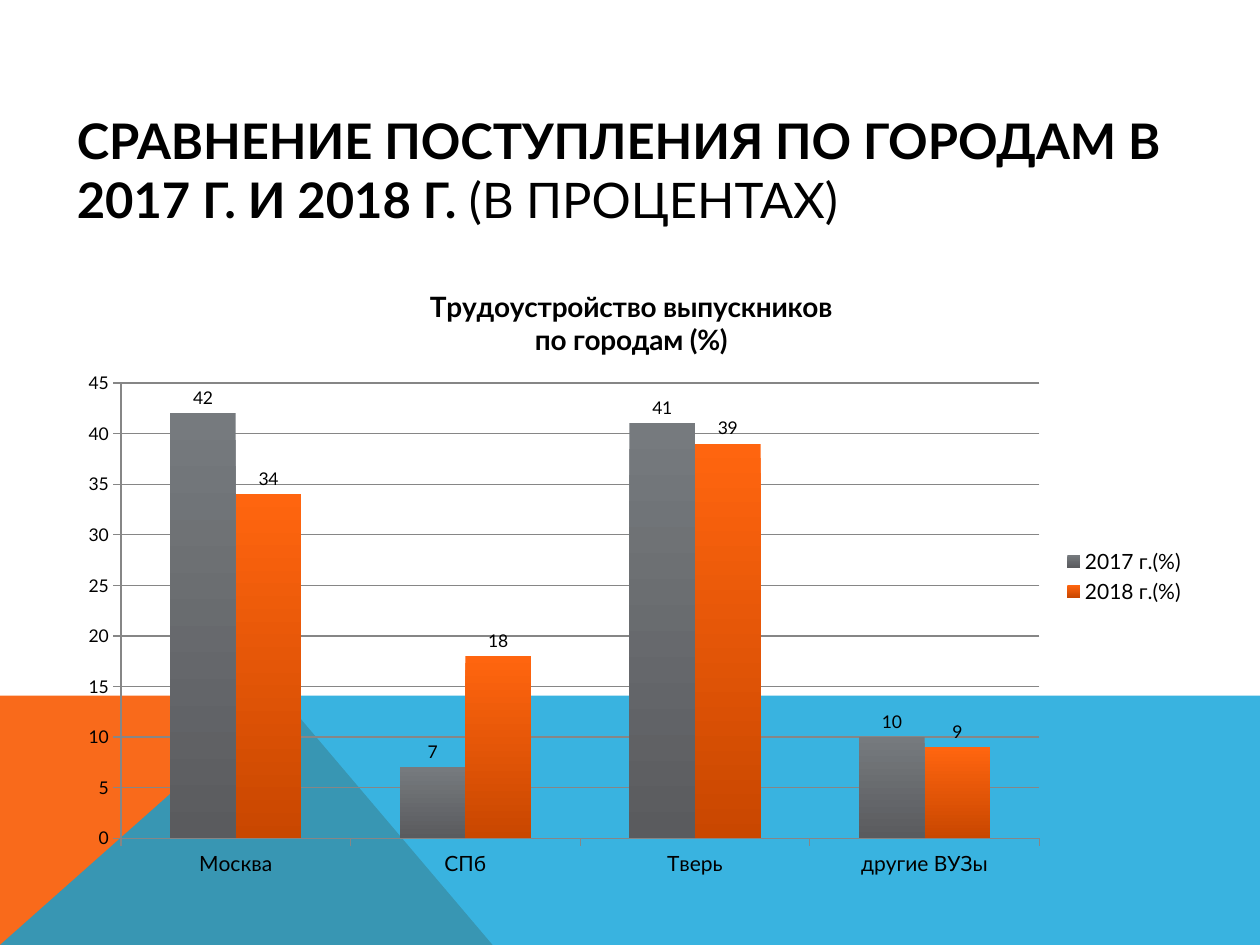
from lxml import etree
from pptx import Presentation
from pptx import util as u
from pptx.chart import data as chart_data
from pptx.dml import color
from pptx.enum import chart as chart_enum
from pptx.enum import text
from pptx.oxml import ns

FONT = "Lato"
COLORS = {
    "text": "000000",
    "orange": "F96A1B",
    "blue": "08A1D9",
    "grid": "868686",
    "gray_top": "767A7E",
    "gray_bottom": "5A5B5E",
    "orange_top": "FF650F",
    "orange_bottom": "C94700",
}
CITIES = ["Москва", "СПб", "Тверь", "другие ВУЗы"]
SERIES = [
    ("2017 г.(%)", [42, 7, 41, 10], "gray"),
    ("2018 г.(%)", [34, 18, 39, 9], "orange"),
]


def rgb(name):
    """Return the named colour."""
    return color.RGBColor.from_string(COLORS[name])


def format_font(font, size, bold=False):
    """Apply the common typeface with a size and weight."""
    font.name = FONT
    font.size = u.Pt(size)
    font.bold = bold
    font.color.rgb = rgb("text")


def add_polygon(slide, points, fill, alpha=None):
    """Add a borderless polygon, optionally translucent."""
    corners = [(u.Inches(x), u.Inches(y)) for x, y in points]
    builder = slide.shapes.build_freeform(*corners[0])
    builder.add_line_segments(corners[1:], close=True)
    shape = builder.convert_to_shape()
    shape.shadow.inherit = False
    shape.fill.solid()
    shape.fill.fore_color.rgb = rgb(fill)
    shape.line.fill.background()
    if alpha is not None:
        solid = shape.element.spPr.find(ns.qn("a:solidFill"))
        etree.SubElement(solid[0], ns.qn("a:alpha")).set("val", str(alpha * 1000))


def add_footer_band(slide, left, top, width, height):
    """Draw the two overlapping shapes along the bottom."""
    right, bottom, peak = left + width, top + height, left + 2.23
    add_polygon(slide, [(left, bottom), (left, top), (peak, top), (left + 3.91, bottom)], "orange")
    add_polygon(slide, [(left, bottom), (peak, top), (right, top), (right, bottom)], "blue", 80)


def place_title(slide, left, top, width, height):
    """Fill and move the title placeholder."""
    title = slide.shapes.title
    title.left, title.top = u.Inches(left), u.Inches(top)
    title.width, title.height = u.Inches(width), u.Inches(height)
    frame = title.text_frame
    frame.word_wrap = True
    frame.auto_size = text.MSO_AUTO_SIZE.NONE
    frame.vertical_anchor = text.MSO_ANCHOR.MIDDLE
    paragraph = frame.paragraphs[0]
    paragraph.alignment = text.PP_ALIGN.LEFT
    parts = [
        ("СРАВНЕНИЕ ПОСТУПЛЕНИЯ ПО ГОРОДАМ В 2017 Г. И 2018 Г.", True),
        (" (В ПРОЦЕНТАХ)", False),
    ]
    for wording, bold in parts:
        run = paragraph.add_run()
        run.text = wording
        format_font(run.font, 28, bold)


def format_chart_title(chart):
    """Write the two-line chart heading."""
    chart.has_title = True
    frame = chart.chart_title.text_frame
    frame.text = "Трудоустройство выпускников\nпо городам (%)"
    for paragraph in frame.paragraphs:
        for run in paragraph.runs:
            format_font(run.font, 16, True)
    chart.chart_title.include_in_layout = False


def format_axes(chart):
    """Set the scale, lines and labels of both axes."""
    for axis, size in ((chart.category_axis, 12), (chart.value_axis, 10)):
        format_font(axis.tick_labels.font, size)
        axis.major_tick_mark = chart_enum.XL_TICK_MARK.OUTSIDE
        axis.format.line.color.rgb = rgb("grid")
    value_axis = chart.value_axis
    value_axis.minimum_scale, value_axis.maximum_scale = 0, 45
    value_axis.major_unit = 5
    value_axis.has_major_gridlines = True
    value_axis.major_gridlines.format.line.color.rgb = rgb("grid")
    value_axis.tick_labels.number_format = "0"
    value_axis.tick_labels.number_format_is_linked = False


def format_series(series, tone):
    """Shade the columns and label their values."""
    fill = series.format.fill
    fill.gradient()
    fill.gradient_angle = 270
    for stop, end, position in zip(fill.gradient_stops, ("top", "bottom"), (0, 1)):
        stop.color.rgb = rgb(f"{tone}_{end}")
        stop.position = position
    series.invert_if_negative = False
    labels = series.data_labels
    labels.show_value = True
    labels.number_format = "0"
    labels.number_format_is_linked = False
    labels.position = chart_enum.XL_LABEL_POSITION.OUTSIDE_END
    format_font(labels.font, 10)


def set_plot_layout(chart, **fractions):
    """Fix the inner plot area as fractions of the chart."""
    area = chart.element.chart.plotArea
    layout = area.find(ns.qn("c:layout"))
    if layout is None:
        layout = etree.Element(ns.qn("c:layout"))
        area.insert(0, layout)
    manual = etree.SubElement(layout, ns.qn("c:manualLayout"))
    settings = {"layoutTarget": "inner", "xMode": "edge", "yMode": "edge", **fractions}
    for name, value in settings.items():
        etree.SubElement(manual, ns.qn(f"c:{name}")).set("val", str(value))


def add_city_chart(slide, left, top, width, height):
    """Add the column chart comparing the two years by city."""
    data = chart_data.CategoryChartData(number_format="0")
    data.categories = CITIES
    for name, values, _ in SERIES:
        data.add_series(name, values)
    box = [u.Inches(length) for length in (left, top, width, height)]
    chart = slide.shapes.add_chart(
        chart_enum.XL_CHART_TYPE.COLUMN_CLUSTERED, *box, data
    ).chart
    format_font(chart.font, 10)
    format_chart_title(chart)
    format_axes(chart)
    plot = chart.plots[0]
    plot.gap_width, plot.overlap = 150, 0
    plot.vary_by_categories = False
    for series, (_, _, tone) in zip(plot.series, SERIES):
        format_series(series, tone)
    chart.has_legend = True
    chart.legend.position = chart_enum.XL_LEGEND_POSITION.RIGHT
    chart.legend.include_in_layout = False
    format_font(chart.legend.font, 12)
    set_plot_layout(chart, x=0.05, y=0.19, w=0.81, h=0.73)


def main():
    """Build and save the slide."""
    presentation = Presentation()
    presentation.slide_width, presentation.slide_height = u.Inches(10), u.Inches(7.5)
    slide = presentation.slides.add_slide(presentation.slide_layouts[5])
    add_footer_band(slide, 0, 5.52, 10, 1.98)
    place_title(slide, 0.51, 0.76, 9, 1.17)
    add_city_chart(slide, 0.51, 2.1, 9, 4.95)
    presentation.save("out.pptx")


if __name__ == "__main__":
    main()
